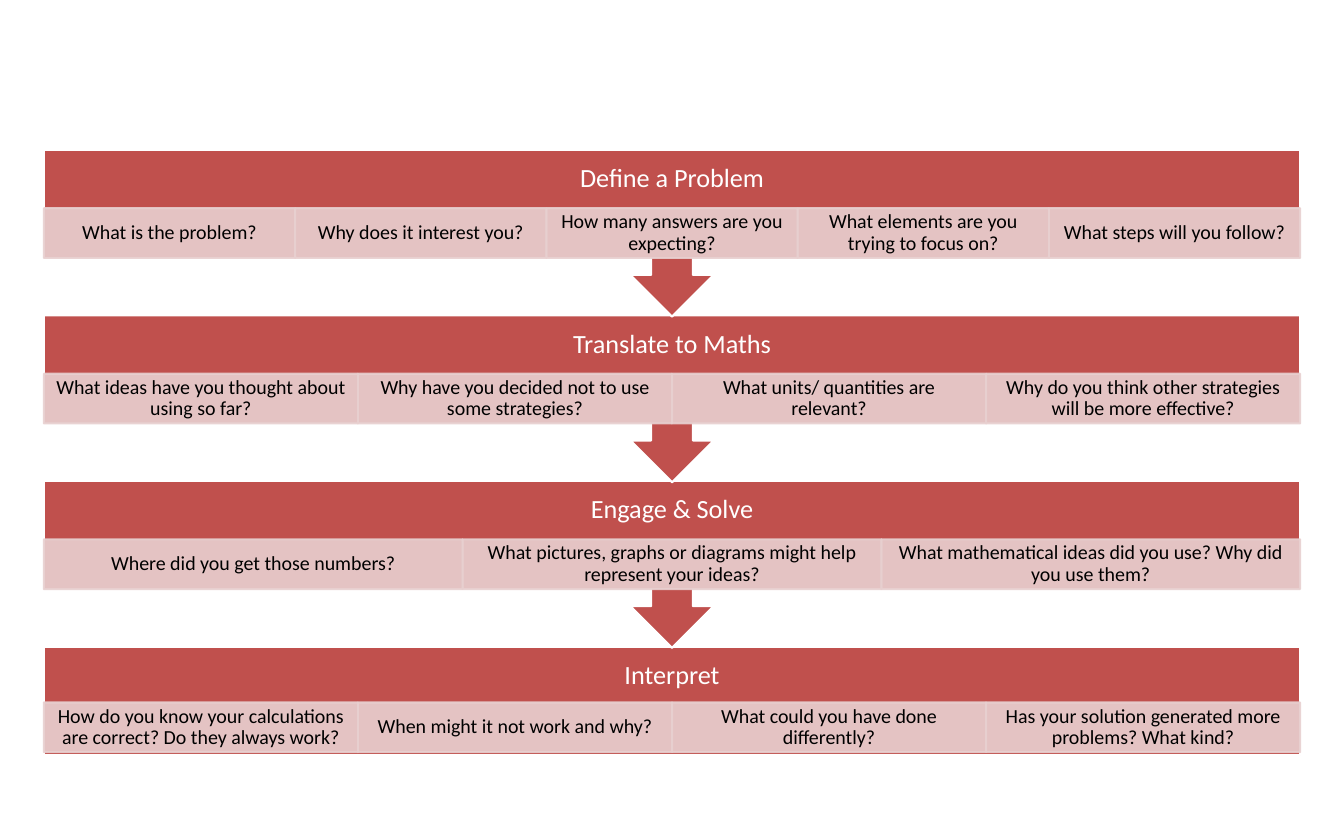
import pptx
import pptx.dml.color
import pptx.enum.shapes
import pptx.enum.text
import pptx.oxml.ns
import pptx.util
from lxml import etree

Inches = pptx.util.Inches
Shapes = pptx.enum.shapes.MSO_SHAPE

COLOURS = {"band": "C0504D", "cell": "E8D0D0", "white": "FFFFFF", "black": "000000"}
FONT = "Calibri"

# The grid: 60 columns divide evenly into 3, 4 or 5 cells; 6 rows make a stage.
LEFT, TOP = 0.58, 1.98
COLUMNS = 60
COLUMN = 16.62 / COLUMNS
STAGE_ROWS = 6
ROW = 2.19 / STAGE_ROWS

HEADING_ROWS, CELL_ROWS = 2.13, 1.8
CALLOUT_ROWS, LAST_BAND_ROWS = 6.05, 3.94
CELL_OFFSET, LAST_CELL_OFFSET = 2.12, 2.03

STAGES = [
    ("Define a Problem", [
        "What is the problem?",
        "Why does it interest you?",
        "How many answers are you expecting?",
        "What elements are you trying to focus on?",
        "What steps will you follow?",
    ]),
    ("Translate to Maths", [
        "What ideas have you thought about using so far?",
        "Why have you decided not to use some strategies?",
        "What units/ quantities are relevant?",
        "Why do you think other strategies will be more effective?",
    ]),
    ("Engage & Solve", [
        "Where did you get those numbers?",
        "What pictures, graphs or diagrams might help represent your ideas?",
        "What mathematical ideas did you use? Why did you use them?",
    ]),
    ("Interpret", [
        "How do you know your calculations are correct? Do they always work?",
        "When might it not work and why?",
        "What could you have done differently?",
        "Has your solution generated more problems? What kind?",
    ]),
]


def colour(name):
    return pptx.dml.color.RGBColor.from_string(COLOURS[name])


class StagePage:
    """Draws the parts of the process on one slide, placed by column and row."""

    def __init__(self, page):
        self.shapes = page.shapes

    def place(self, column, row, columns, rows):
        return (Inches(LEFT + column * COLUMN), Inches(TOP + row * ROW),
                Inches(columns * COLUMN), Inches(rows * ROW))

    def outlined(self, kind, place, fill, line):
        shape = self.shapes.add_shape(kind, *place)
        shape.shadow.inherit = False
        shape.fill.solid()
        shape.fill.fore_color.rgb = colour(fill)
        shape.line.color.rgb = colour(line)
        shape.line.width = pptx.util.Pt(2)
        return shape

    def label(self, box, text, size, ink, side, edge):
        frame = box.text_frame
        frame.word_wrap = True
        frame.vertical_anchor = pptx.enum.text.MSO_ANCHOR.MIDDLE
        frame.margin_left = frame.margin_right = Inches(side)
        frame.margin_top = frame.margin_bottom = Inches(edge)
        para = frame.paragraphs[0]
        para.alignment = pptx.enum.text.PP_ALIGN.CENTER
        para.line_spacing = 0.9
        span = para.add_run()
        span.text = text
        span.font.name = FONT
        span.font.size = pptx.util.Pt(size)
        span.font.color.rgb = colour(ink)

    def band(self, row, is_last):
        """Add a plain band for the last stage, else one with a down arrow."""
        kind = Shapes.RECTANGLE if is_last else Shapes.UP_ARROW_CALLOUT
        rows = LAST_BAND_ROWS if is_last else CALLOUT_ROWS
        shape = self.outlined(kind, self.place(0, row, COLUMNS, rows), "band", "white")
        if not is_last:
            shape.rotation = 180

    def heading(self, row, text):
        box = self.shapes.add_textbox(*self.place(0, row, COLUMNS, HEADING_ROWS))
        self.label(box, text, 25, "white", 0.19, 0.19)

    def cell(self, column, row, columns, text):
        place = self.place(column, row, columns, CELL_ROWS)
        shape = self.outlined(Shapes.RECTANGLE, place, "cell", "cell")
        for tone in shape.element.spPr.iter(pptx.oxml.ns.qn("a:srgbClr")):
            etree.SubElement(tone, pptx.oxml.ns.qn("a:alpha"), val="90000")
        self.label(shape, text, 19, "black", 0.15, 0.03)

    def stage(self, row, title, questions, is_last):
        self.band(row, is_last)
        self.heading(row, title)
        cell_row = row + (LAST_CELL_OFFSET if is_last else CELL_OFFSET)
        columns = COLUMNS / len(questions)
        for index, question in enumerate(questions):
            self.cell(index * columns, cell_row, columns, question)


def main():
    deck = pptx.Presentation()
    deck.slide_width, deck.slide_height = Inches(17.78), Inches(11.11)
    blank_layout = deck.slide_layouts[6]
    page = StagePage(deck.slides.add_slide(blank_layout))
    last = len(STAGES) - 1
    # From the bottom up, so that each arrow lies over the next band.
    for index in range(last, -1, -1):
        title, questions = STAGES[index]
        page.stage(index * STAGE_ROWS, title, questions, index == last)
    deck.save("out.pptx")


if __name__ == "__main__":
    main()
